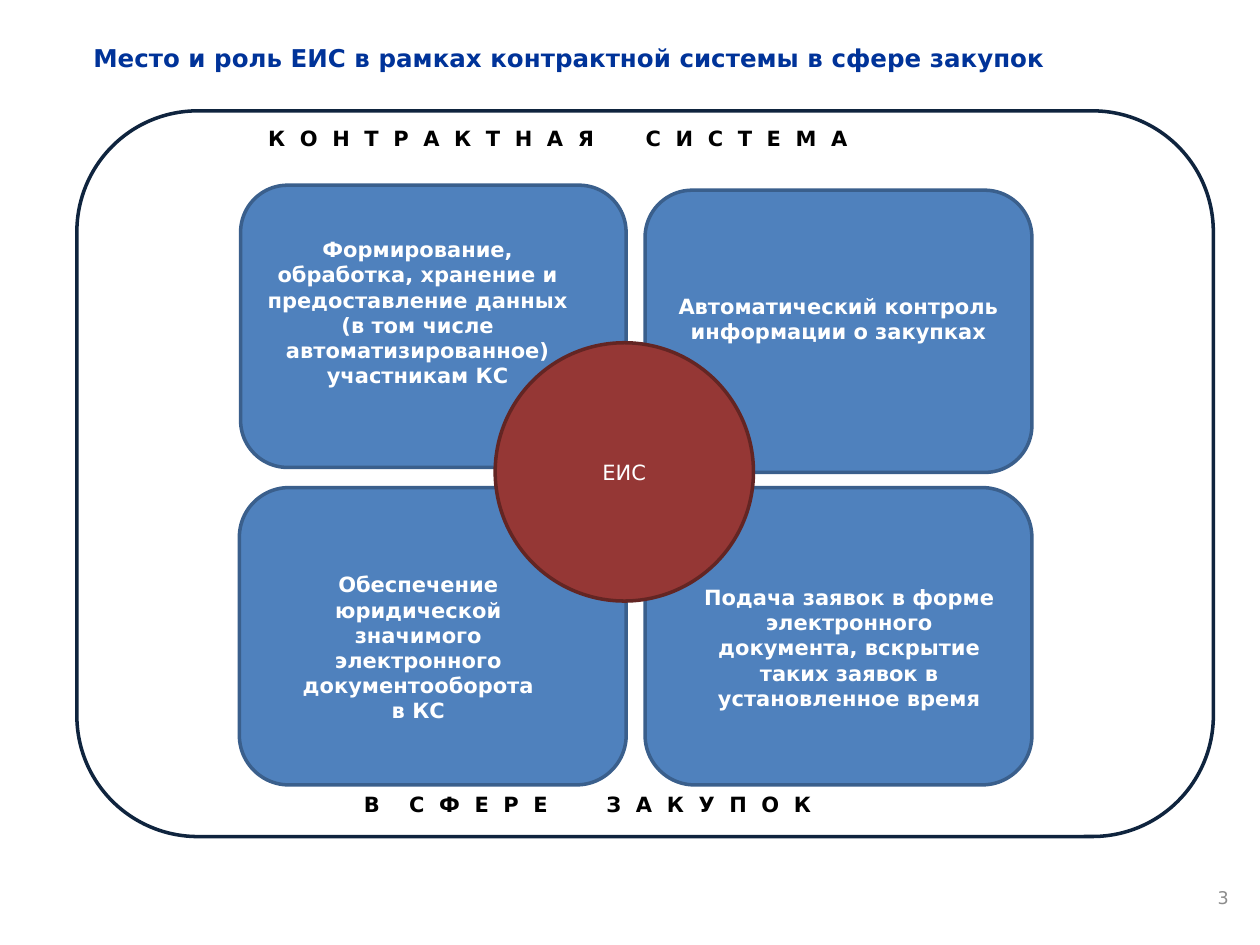
from typing import NamedTuple

from pptx import Presentation
from pptx.dml.color import RGBColor
from pptx.enum.shapes import MSO_SHAPE
from pptx.enum.text import MSO_ANCHOR, MSO_AUTO_SIZE, PP_ALIGN
from pptx.util import Inches, Pt

ROUND, OVAL = MSO_SHAPE.ROUNDED_RECTANGLE, MSO_SHAPE.OVAL
LEFT, CENTER, RIGHT = PP_ALIGN.LEFT, PP_ALIGN.CENTER, PP_ALIGN.RIGHT
TOP, MIDDLE = MSO_ANCHOR.TOP, MSO_ANCHOR.MIDDLE
TITLE_ONLY = 5
FONT = "DejaVu Sans"
COLORS = {
    "white": "FFFFFF", "black": "000000", "title": "003399", "number": "8C8C8C",
    "frame": "0F243E", "card": "4F81BD", "card_line": "3A5F8C",
    "hub": "953735", "hub_line": "632523",
}

prs = Presentation()
prs.slide_width, prs.slide_height = Inches(10), Inches(7.5)
UNIT = prs.slide_width / 100  # the slide is a grid of 100 columns by 75 rows


class Box(NamedTuple):
    col: float
    row: float
    cols: float
    rows: float

    def emu(self) -> list[int]:
        return [round(v * UNIT) for v in self]


class Label(NamedTuple):
    box: Box
    lines: list[str]


class Banner(NamedTuple):
    box: Box
    words: list[str]
    gaps: list[float]  # extra points after each word but the last


def color(name: str) -> RGBColor:
    return RGBColor.from_string(COLORS[name])


def add_run(p, text: str, *, size=12, bold=True, fill="white", spacing=0.0):
    r = p.add_run()
    r.text = text
    r.font.name, r.font.size, r.font.bold = FONT, Pt(size), bold
    r.font.color.rgb = color(fill)
    if spacing:
        r._r.get_or_add_rPr().set("spc", str(round(spacing * 100)))


def write(sp, lines: list[str], *, align=CENTER, anchor=TOP, **font):
    tf = sp.text_frame
    tf.word_wrap, tf.auto_size, tf.vertical_anchor = True, MSO_AUTO_SIZE.NONE, anchor
    for i, line in enumerate(lines):
        p = tf.add_paragraph() if i else tf.paragraphs[0]
        p.alignment = align
        add_run(p, line, **font)


def add_block(slide, kind, box: Box, fill: str, line: str):
    sp = slide.shapes.add_shape(kind, *box.emu())
    sp.shadow.inherit = False
    sp.fill.solid()
    sp.fill.fore_color.rgb = color(fill)
    sp.line.color.rgb = color(line)
    sp.line.width = Pt(2)
    return sp


def add_banner(slide, banner: Banner):
    """Spread the letters of each word, with wider gaps between words."""
    tf = slide.shapes.add_textbox(*banner.box.emu()).text_frame
    tf.word_wrap = True
    p = tf.paragraphs[0]
    for word, gap in zip(banner.words, banner.gaps + [0]):
        add_run(p, " ".join(word), fill="black", spacing=2.1)
        if gap:
            add_run(p, " ", fill="black", spacing=gap)


CARDS = [
    Box(19.1, 14.7, 30.6, 22.4), Box(51.2, 15.1, 30.7, 22.4),
    Box(19, 38.7, 30.7, 23.6), Box(51.2, 38.7, 30.7, 23.6),
]
LABELS = [
    Label(Box(54.4, 45.9, 26, 11.1),
          ["Подача заявок в форме электронного документа, вскрытие таких "
           "заявок в установленное время"]),
    Label(Box(19.1, 18.3, 28.1, 13.1),
          ["Формирование, обработка, хранение и предоставление данных "
           "(в том числе автоматизированное) участникам КС"]),
    Label(Box(20.5, 44.9, 25.4, 13.1),
          ["Обеспечение юридической значимого электронного документооборота",
           "в КС"]),
]
BANNERS = [
    Banner(Box(20.3, 9.5, 64, 3), ["КОНТРАКТНАЯ", "СИСТЕМА"], [22.9]),
    Banner(Box(27.9, 62.3, 48.8, 3), ["В", "СФЕРЕ", "ЗАКУПОК"], [10.4, 27.1]),
]

slide = prs.slides.add_slide(prs.slide_layouts[TITLE_ONLY])
title = slide.shapes.title
title.left, title.top, title.width, title.height = Box(6.4, 2.9, 93.6, 3.4).emu()
write(title, ["Место и роль ЕИС в рамках контрактной системы в сфере закупок"],
      align=LEFT, size=14, fill="title")

add_block(slide, ROUND, Box(6.1, 8.8, 90.2, 57.6), "white", "frame")
cards = [add_block(slide, ROUND, box, "card", "card_line") for box in CARDS]
control = cards[1]
write(control, ["Автоматический контроль информации о закупках"], anchor=MIDDLE)
control.text_frame.margin_bottom = Inches(0.25)

hub = add_block(slide, OVAL, Box(39.3, 27.2, 20.5, 20.5), "hub", "hub_line")
write(hub, ["ЕИС"], anchor=MIDDLE, bold=False)

for label in LABELS:
    write(slide.shapes.add_textbox(*label.box.emu()), label.lines)
for banner in BANNERS:
    add_banner(slide, banner)
number = slide.shapes.add_textbox(*Box(75.2, 69.2, 23.3, 4).emu())
write(number, ["3"], align=RIGHT, anchor=MIDDLE, size=10, bold=False, fill="number")

prs.save("out.pptx")
